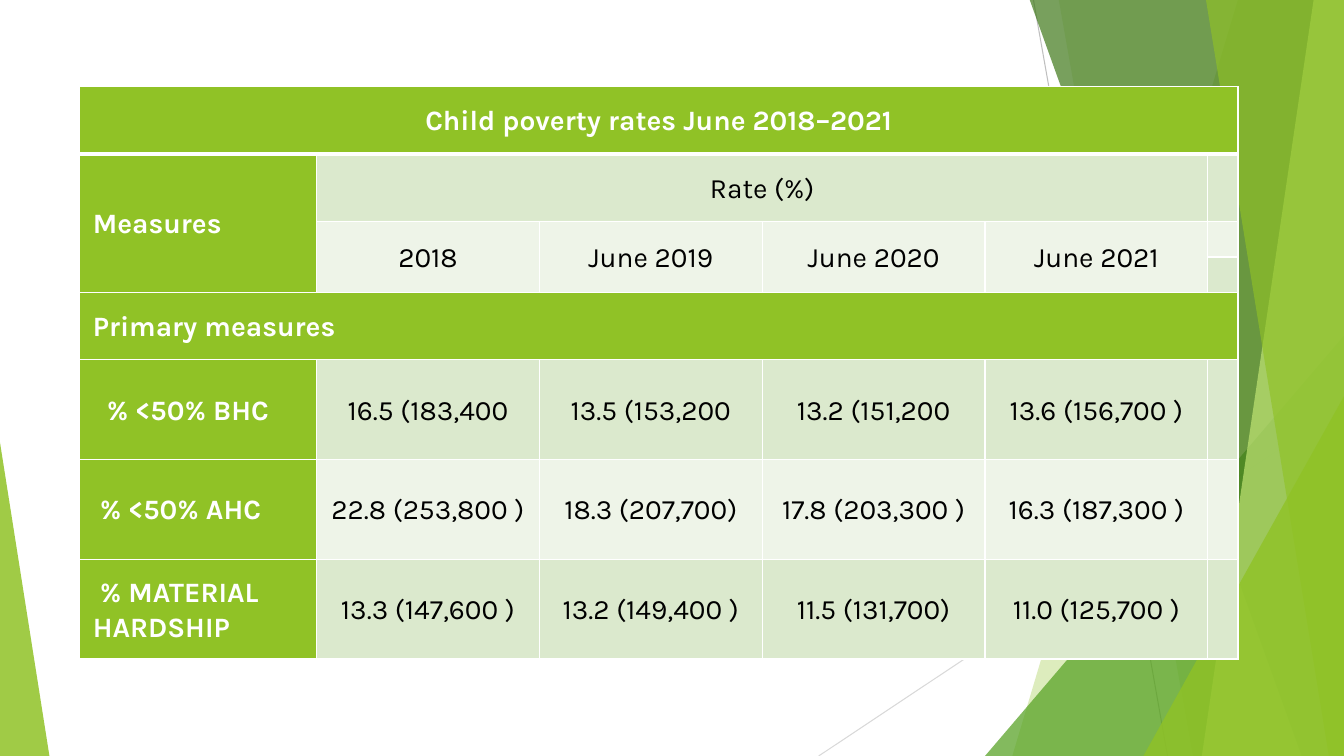
"""Build the child poverty rates slide."""
import pptx
import pptx.util
import pptx.dml.color
import pptx.enum.shapes
import pptx.enum.text
import pptx.oxml
import pptx.oxml.ns

Inches = pptx.util.Inches
Pt = pptx.util.Pt
COLORS = {
    "green": "90C226", "mid": "54A021", "dark": "3F7819", "lime": "C0E474",
    "band": "DBE9CD", "pale": "EEF4E8", "white": "FFFFFF", "black": "000000",
    "gray": "BFBFBF", "silver": "D9D9D9",
}
FONT = "Karla"
TOP, BOTTOM, RIGHT = -0.01, 7.5, 13.33
LINES = [((10.25, 0), (11.58, 7.5), "gray"), ((13.33, 4.03), (8.12, 7.5), "silver")]
BACKDROP = [
    ("ribbon", (12.28, 10.04), "green", 30),
    ("ribbon", (10.5, 11.83), "green", 20),
    ("triangle", (9.77, 3.33, 3.56, 4.17, 1), "mid", 72),
    ("ribbon", (10.21, 12.91), "dark", 70),
    ("ribbon", (13.03, 11.92), "lime", 70),
    ("ribbon", (11.96, 13.18), "green", 65),
    ("triangle", (11.34, 3.93, 1.99, 3.57, 1), "green", 80),
    ("triangle", (0, 4.39, 0.49, 3.11, 0), "green", 85),
]
COLUMNS = [2.35, 2.21, 2.21, 2.21, 2.21, 0.27]
ROWS = [0.67, 0.67, 0.35, 0.35, 0.67, 0.99, 0.99, 0.99]
CELLS = [
    ["Child poverty rates June 2018–2021"],
    ["Measures", "Rate (%)"],
    ["", "2018", "June 2019", "June 2020", "June 2021"],
    [],
    ["Primary measures"],
    ["% <50% BHC", "16.5 (183,400", "13.5 (153,200", "13.2 (151,200", "13.6 (156,700 )"],
    ["% <50% AHC", "22.8 (253,800 )", "18.3 (207,700)", "17.8 (203,300 )", "16.3 (187,300 )"],
    ["% MATERIAL HARDSHIP", "13.3 (147,600 )", "13.2 (149,400 )", "11.5 (131,700)", "11.0 (125,700 )"],
]
MERGES = [(0, 0, 0, 5), (1, 0, 3, 0), (1, 1, 1, 4), (4, 0, 4, 5)]
MERGES += [(2, column, 3, column) for column in range(1, 5)]
INDENTS = {5: 0.14, 6: 0.07, 7: 0.07}


def rgb(name):
    return pptx.dml.color.RGBColor.from_string(COLORS[name])


def add_line(page, start, end, color):
    line = page.shapes.add_connector(
        pptx.enum.shapes.MSO_CONNECTOR.STRAIGHT, *map(Inches, start + end))
    line.line.color.rgb = rgb(color)
    line.line.width = Pt(0.75)
    properties = line._element.spPr
    properties.append(properties.makeelement(pptx.oxml.ns.qn("a:effectLst"), {}))


def add_backdrop(page, kind, geometry, color, opacity):
    if kind == "ribbon":
        upper, lower = geometry
        builder = page.shapes.build_freeform(Inches(upper), Inches(TOP))
        corners = [(RIGHT, TOP), (RIGHT, BOTTOM), (lower, BOTTOM)]
        builder.add_line_segments([(Inches(x), Inches(y)) for x, y in corners], close=True)
        shape = builder.convert_to_shape()
    else:
        shape = page.shapes.add_shape(
            pptx.enum.shapes.MSO_SHAPE.ISOSCELES_TRIANGLE, *map(Inches, geometry[:4]))
        shape.adjustments[0] = geometry[4]
    shape.shadow.inherit = False
    shape.line.fill.background()
    shape.fill.solid()
    shape.fill.fore_color.rgb = rgb(color)
    tint = shape._element.spPr.find(".//" + pptx.oxml.ns.qn("a:srgbClr"))
    tint.append(tint.makeelement(pptx.oxml.ns.qn("a:alpha"), {"val": str(opacity * 1000)}))


def add_borders(cell, row):
    properties = cell._tc.get_or_add_tcPr()
    thick = {("B", 0), ("T", 1)}
    for side in "LRTB":
        width = Pt(3 if (side, row) in thick else 1)
        properties.append(pptx.oxml.parse_xml(
            f'<a:ln{side} {pptx.oxml.ns.nsdecls("a")} w="{width}"><a:solidFill>'
            f'<a:srgbClr val="{COLORS["white"]}"/></a:solidFill></a:ln{side}>'))


def fill_cell(cell, row, column):
    heading = column == 0 or row in (0, 4)
    add_borders(cell, row)
    cell.fill.solid()
    cell.fill.fore_color.rgb = rgb(
        "green" if heading else "pale" if row in (2, 6) else "band")
    para = cell.text_frame.paragraphs[0]
    text = CELLS[row][column] if column < len(CELLS[row]) else ""
    if not text:
        end = para._p.makeelement(pptx.oxml.ns.qn("a:endParaRPr"), {"sz": "800"})
        para._p.append(end)
        return
    cell.vertical_anchor = pptx.enum.text.MSO_ANCHOR.MIDDLE
    cell.margin_left = cell.margin_right = Inches(0.13)
    cell.margin_top = cell.margin_bottom = Inches(0.13)
    centered = row == 0 or column > 0
    para.alignment = pptx.enum.text.PP_ALIGN.CENTER if centered else pptx.enum.text.PP_ALIGN.LEFT
    para.line_spacing = 1.07
    para.space_after = Pt(8 if row else 3.8)
    if column == 0 and row in INDENTS:
        para._p.get_or_add_pPr().set("indent", str(Inches(INDENTS[row])))
    span = para.add_run()
    span.text = text
    span.font.name = FONT
    span.font.size = Pt(20)
    span.font.bold = heading
    span.font.color.rgb = rgb("white" if heading else "black")


def add_rates_table(page):
    frame = page.shapes.add_table(
        len(ROWS), len(COLUMNS), Inches(0.79), Inches(0.86),
        Inches(sum(COLUMNS)), Inches(sum(ROWS)))
    table = frame.table
    for column, width in enumerate(COLUMNS):
        table.columns[column].width = Inches(width)
    for row, height in enumerate(ROWS):
        table.rows[row].height = Inches(height)
        for column in range(len(COLUMNS)):
            fill_cell(table.cell(row, column), row, column)
    for top, left, bottom, right in MERGES:
        table.cell(top, left).merge(table.cell(bottom, right))


def main():
    deck = pptx.Presentation()
    deck.slide_width, deck.slide_height = Inches(13.33), Inches(7.5)
    page = deck.slides.add_slide(deck.slide_layouts[6])
    for line in LINES:
        add_line(page, *line)
    for part in BACKDROP:
        add_backdrop(page, *part)
    add_rates_table(page)
    deck.save("out.pptx")


if __name__ == "__main__":
    main()
